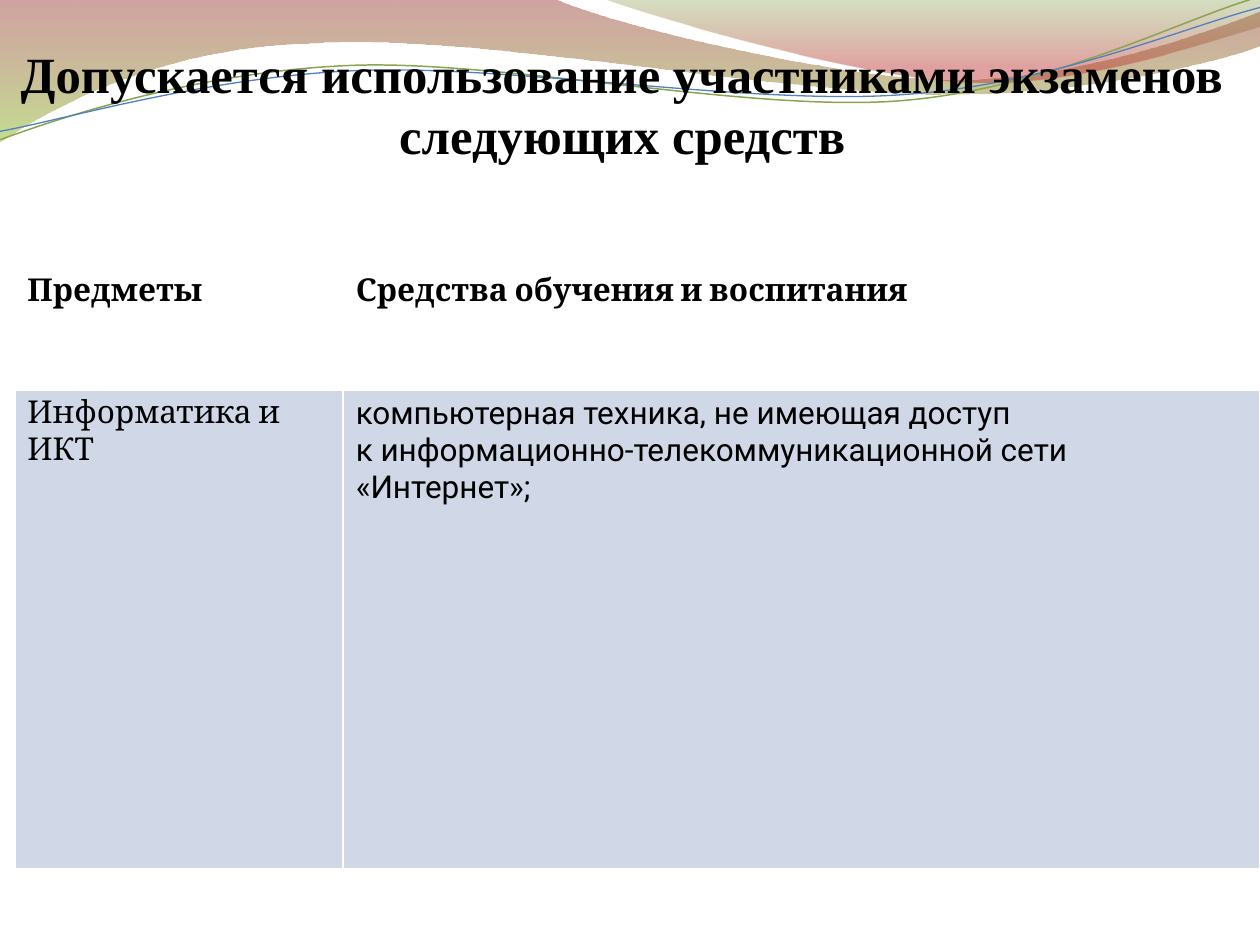
from lxml import etree
from pptx import Presentation
from pptx.dml.color import RGBColor
from pptx.enum.text import MSO_ANCHOR, PP_ALIGN
from pptx.oxml.ns import qn
from pptx.util import Pt

BOTTOM, CENTER = MSO_ANCHOR.BOTTOM, PP_ALIGN.CENTER
TITLE_ONLY = 5
NO_BREAK_SPACE = chr(160)
CURVE_ROTATION = 357.3

COLORS = {
    "text": "000000",
    "white": "FFFFFF",
    "body_cell": "D0D8E8",
    "dark_red": "973330",
    "lime": "95C238",
    "olive": "769537",
    "red": "BE3330",
    "green_line": "89A54F",
    "blue_line": "4F81BD",
}

# Outlines in points: a pair is a straight step, six numbers are a Bezier step
LEFT_WAVE = [
    (0, 0), (316.8, -0.7),
    (342.7, 12.2, 478.1, 45.4, 545.8, 45.4),
    (614.2, 45.4, 689.8, 18.7, 720, 6.5),
    (720.7, 25.9),
    (707.8, 31.7, 626.4, 54.7, 537.1, 54),
    (447.8, 54, 275, 20.2, 185, 24.5),
    (92.9, 25.9, 33.1, 59.8, -0.7, 81.4),
]
RIGHT_WAVE = [
    (344.9, -0.7),
    (366.5, 7.9, 491, 44.6, 553.7, 46.8),
    (616.3, 49.7, 691.9, 23, 720, 15.1),
    (720, 0),
]
# The two thin curves are given before their rotation
GREEN_CURVE = [
    (-1.4, 62.9),
    (33.8, 51.7, 114.1, 29.4, 199.8, 29.9),
    (284.8, 30.3, 425.8, 67.3, 512.4, 64.9),
    (599, 62.4, 676.5, 25.7, 720.2, 15.5),
]
BLUE_CURVE = [
    (-1.1, 58),
    (32.9, 53.8, 118.3, 32.5, 204.1, 33),
    (290.6, 33.4, 428.9, 63.8, 515.5, 61.4),
    (601.3, 59.6, 678.5, 30.1, 721.4, 21.3),
]

TITLE = "Допускается использование участниками экзаменов следующих средств"
# Rows of (text, font) pairs
TABLE_ROWS = [
    [("Предметы", "Cambria"), ("Средства обучения и воспитания", "Cambria")],
    [("Информатика и ИКТ", "Cambria"),
     (f"компьютерная техника, не{NO_BREAK_SPACE}имеющая доступ "
      f"к{NO_BREAK_SPACE}информационно-телекоммуникационной сети «Интернет»;",
      "Roboto")],
]
COLUMN_WIDTHS = [187.6, 523.9]
ROW_HEIGHTS = [70, 274.3]


def rgb(name):
    return RGBColor.from_string(COLORS[name])


def add_outline(slide, steps, close):
    """Join the steps' end points, then bend the Bezier steps."""
    corners = [(Pt(step[-2]), Pt(step[-1])) for step in steps]
    builder = slide.shapes.build_freeform(*corners[0])
    builder.add_line_segments(corners[1:], close=close)
    outline = builder.convert_to_shape()
    outline.shadow.inherit = False
    segments = outline.element.spPr.findall(".//" + qn("a:lnTo"))
    for segment, step in zip(segments, steps[1:]):
        if len(step) == 2:
            continue
        bend = etree.Element(qn("a:cubicBezTo"))
        for x, y in zip(step[::2], step[1::2]):
            etree.SubElement(bend, qn("a:pt"), x=str(Pt(x) - outline.left),
                             y=str(Pt(y) - outline.top))
        segment.getparent().replace(segment, bend)
    return outline


def add_wave(slide, steps, stops):
    """Add a filled wave; stops are (position %, colour, opacity %)."""
    wave = add_outline(slide, steps, close=True)
    wave.line.fill.background()
    wave.fill.gradient()
    wave.fill.gradient_angle = 270
    stop_list = wave.element.spPr.find(".//" + qn("a:gsLst"))
    for old_stop in list(stop_list):
        stop_list.remove(old_stop)
    for position, color, opacity in stops:
        stop = etree.SubElement(stop_list, qn("a:gs"), pos=str(position * 1000))
        tint = etree.SubElement(stop, qn("a:srgbClr"), val=COLORS[color])
        etree.SubElement(tint, qn("a:alpha"), val=str(opacity * 1000))


def add_curve(slide, steps, color, width):
    curve = add_outline(slide, steps, close=False)
    curve.rotation = CURVE_ROTATION
    curve.fill.background()
    curve.line.color.rgb = rgb(color)
    curve.line.width = Pt(width)


def format_text(paragraph, font_name, size, bold):
    for run in paragraph.runs:
        run.font.name = font_name
        run.font.size = Pt(size)
        run.font.bold = bold
        run.font.color.rgb = rgb("text")


def fill_title(slide):
    title = slide.shapes.title
    title.left, title.top, title.width, title.height = Pt(0), Pt(20.7), Pt(711.5), Pt(73.3)
    frame = title.text_frame
    frame.text = TITLE
    frame.word_wrap = True
    frame.vertical_anchor = BOTTOM
    frame.margin_left = frame.margin_right = frame.margin_bottom = 0
    frame.margin_top = Pt(3.6)
    frame.paragraphs[0].alignment = CENTER
    format_text(frame.paragraphs[0], "Times New Roman", 29, True)
    # Bring the title in front of the waves
    title.element.getparent().append(title.element)


def set_borders(cell, bottom_width):
    properties = cell._tc.get_or_add_tcPr()
    widths = {"a:lnL": 1, "a:lnR": 1, "a:lnT": 1, "a:lnB": bottom_width}
    for index, (tag, width) in enumerate(widths.items()):
        border = etree.Element(qn(tag), w=str(Pt(width)))
        solid = etree.SubElement(border, qn("a:solidFill"))
        etree.SubElement(solid, qn("a:srgbClr"), val=COLORS["white"])
        properties.insert(index, border)


def add_aids_table(slide):
    table = slide.shapes.add_table(
        len(ROW_HEIGHTS), len(COLUMN_WIDTHS), Pt(8.5), Pt(152.4),
        Pt(sum(COLUMN_WIDTHS)), Pt(sum(ROW_HEIGHTS))).table
    table.first_row = table.horz_banding = False
    for column, width in zip(table.columns, COLUMN_WIDTHS):
        column.width = Pt(width)
    for row_index, (row, height) in enumerate(zip(table.rows, ROW_HEIGHTS)):
        row.height = Pt(height)
        is_header = row_index == 0
        for cell, (text, font_name) in zip(row.cells, TABLE_ROWS[row_index]):
            cell.text_frame.text = text
            format_text(cell.text_frame.paragraphs[0], font_name, 18, is_header)
            cell.fill.solid()
            cell.fill.fore_color.rgb = rgb("white" if is_header else "body_cell")
            set_borders(cell, 3 if is_header else 1)


def main():
    presentation = Presentation()
    presentation.slide_width, presentation.slide_height = Pt(720), Pt(540)
    slide = presentation.slides.add_slide(presentation.slide_layouts[TITLE_ONLY])

    # Decorative waves along the top
    add_wave(slide, LEFT_WAVE, [(0, "dark_red", 45), (100, "lime", 55)])
    add_wave(slide, RIGHT_WAVE, [(0, "olive", 30), (80, "red", 45)])
    add_curve(slide, GREEN_CURVE, "green_line", 0.85)
    add_curve(slide, BLUE_CURVE, "blue_line", 0.75)

    # Content
    fill_title(slide)
    add_aids_table(slide)
    presentation.save("out.pptx")


if __name__ == "__main__":
    main()
